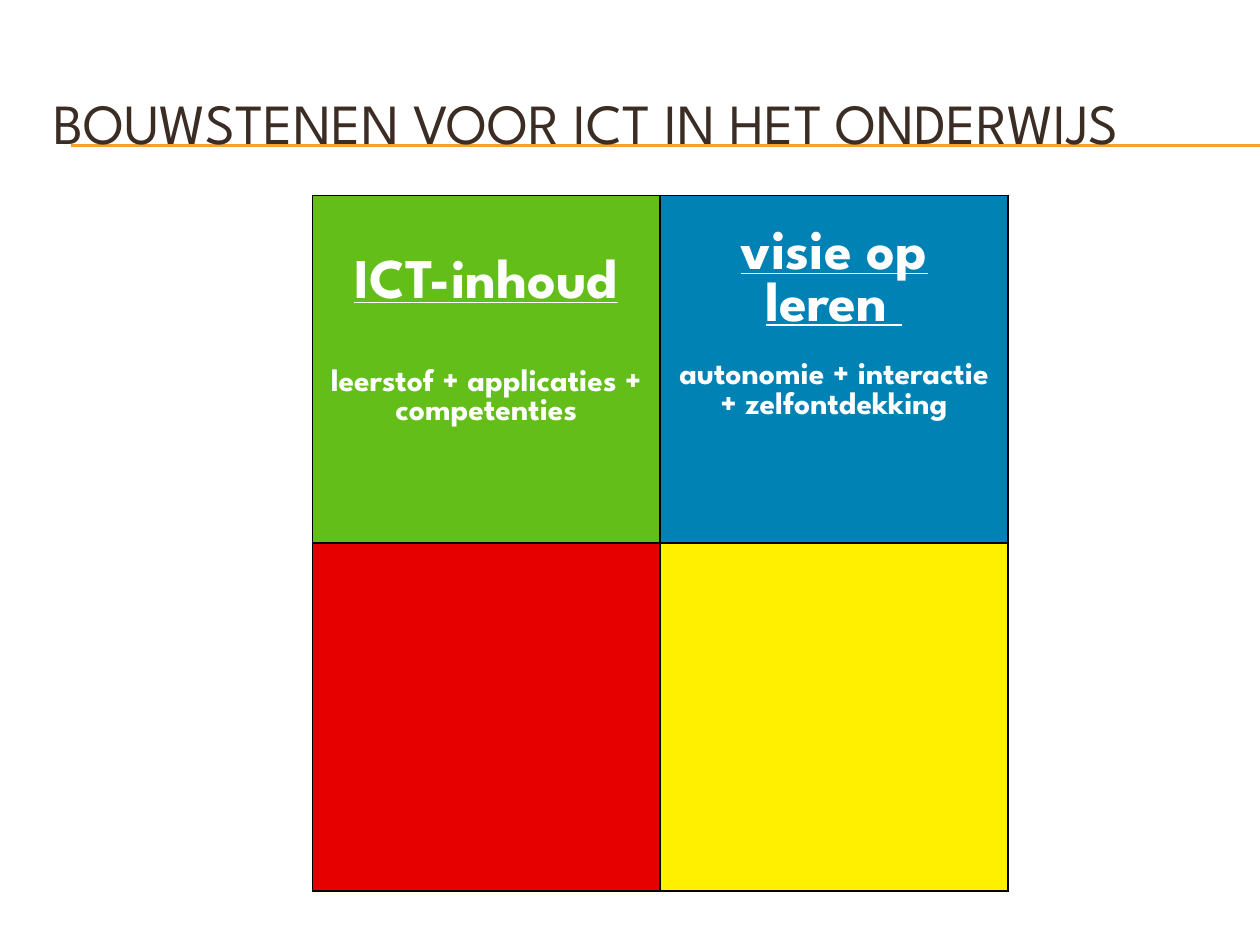
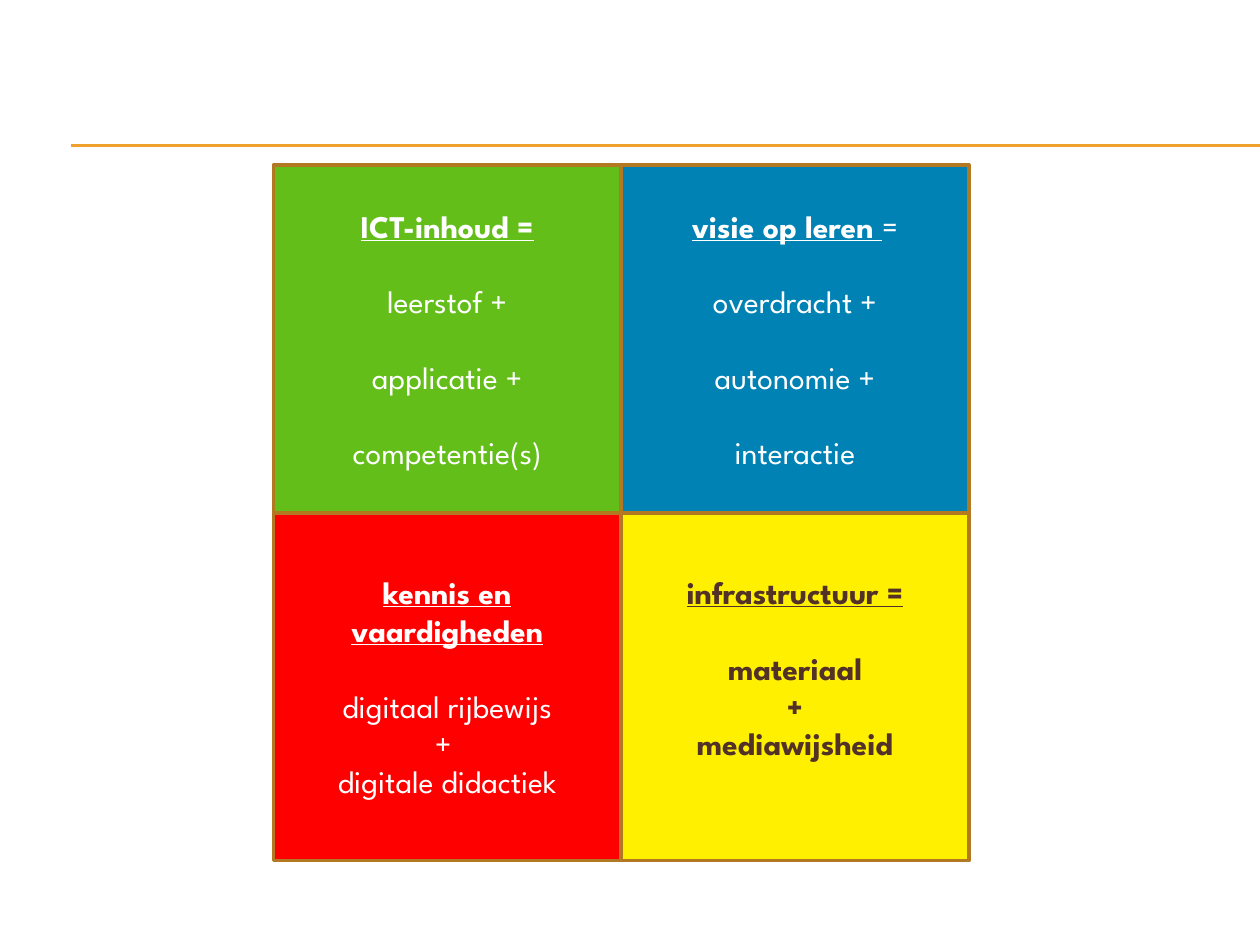
import lxml.etree
import pptx
import pptx.dml.color
import pptx.enum.shapes
import pptx.enum.text
import pptx.oxml
import pptx.oxml.ns
import pptx.util

Inches = pptx.util.Inches
Pt = pptx.util.Pt
qn = pptx.oxml.ns.qn

GREEN, BLUE, YELLOW = "64BE19", "0082B4", "FFF000"
WHITE, BROWN = "FFFFFF", "523227"
TILE = 2.76
PITCH = 21.6
BLANK = 0.23


def rgb(value):
    return pptx.dml.color.RGBColor.from_string(value)


class Deck:
    """Holds the shared style and the slide being built."""

    font = "League Spartan"
    accent, title_color, tile_edge = "F0A22E", "3B2C24", "B27822"

    def __init__(self):
        self.prs = pptx.Presentation()
        self.prs.slide_width, self.prs.slide_height = Inches(10), Inches(7.5)

    def new_slide(self):
        self.slide = self.prs.slides.add_slide(self.prs.slide_layouts[6])
        for y in (1.15, 1.16):
            self.rule(y)

    def rule(self, y):
        rule = self.slide.shapes.add_connector(
            pptx.enum.shapes.MSO_CONNECTOR.STRAIGHT,
            Inches(0.56), Inches(y), Inches(10), Inches(y))
        rule.line.color.rgb = rgb(self.accent)
        rule.line.width = Pt(0.75)
        lxml.etree.SubElement(rule._element.spPr, qn("a:effectLst"))

    def add_text(self, paragraph, text, size, color, bold=False, underline=False):
        paragraph.add_run().text = text
        font = paragraph.font
        font.name, font.size = self.font, Pt(size)
        font.bold, font.underline = bold, underline
        font.color.rgb = rgb(color)

    def title(self, text):
        box = self.slide.shapes.add_textbox(
            Inches(0.33), Inches(0.5), Inches(9.5), Inches(0.92))
        frame = box.text_frame
        frame.word_wrap = True
        frame.vertical_anchor = pptx.enum.text.MSO_ANCHOR.MIDDLE
        frame.paragraphs[0].line_spacing = Pt(40)
        self.add_text(frame.paragraphs[0], text, 32.4, self.title_color)

    def tile(self, x, y, fill, heading, lines, gap, color=WHITE,
             bold=False, tail="", blank_below=0):
        tile = self.slide.shapes.add_shape(
            pptx.enum.shapes.MSO_SHAPE.RECTANGLE,
            Inches(x), Inches(y), Inches(TILE), Inches(TILE))
        tile.shadow.inherit = False
        tile.fill.solid()
        tile.fill.fore_color.rgb = rgb(fill)
        tile.line.color.rgb = rgb(self.tile_edge)
        tile.line.width = Pt(2)
        frame = tile.text_frame
        frame.word_wrap = True
        frame.vertical_anchor = pptx.enum.text.MSO_ANCHOR.MIDDLE
        frame.margin_bottom = Inches(0.05 + blank_below)
        first = frame.paragraphs[0]
        self.add_text(first, heading, 18, color, True, True)
        if tail:
            equals = first.add_run()
            equals.text = tail
            equals.font.bold = equals.font.underline = False
        for i, line in enumerate(lines):
            paragraph = frame.add_paragraph()
            self.add_text(paragraph, line, 18, color, bold)
            if i == 0 or gap:
                paragraph.space_before = Pt(PITCH)
        for paragraph in frame.paragraphs:
            paragraph.alignment = pptx.enum.text.PP_ALIGN.CENTER
            paragraph.line_spacing = Pt(PITCH)

    def grid(self, x, y, rows):
        side = Inches(2 * TILE)
        table = self.slide.shapes.add_table(
            2, 2, Inches(x), Inches(y), side, side).table
        for i in range(2):
            table.rows[i].height = table.columns[i].width = Inches(TILE)
        for r, row in enumerate(rows):
            for c, block in enumerate(row):
                self.block(table.cell(r, c), *block)

    def block(self, cell, fill, heading="", body="", blanks=0):
        cell.fill.solid()
        cell.fill.fore_color.rgb = rgb(fill)
        self.borders(cell)
        if not heading:
            return
        cell.margin_top = Inches(0.05 + blanks * BLANK)
        frame = cell.text_frame
        self.add_text(frame.paragraphs[0], heading, 32, WHITE, True, True)
        paragraph = frame.add_paragraph()
        self.add_text(paragraph, body, 18, WHITE, True)
        paragraph.space_before = Inches(blanks * BLANK)
        for paragraph in frame.paragraphs:
            paragraph.alignment = pptx.enum.text.PP_ALIGN.CENTER

    def borders(self, cell):
        properties = cell._tc.get_or_add_tcPr()
        for i, side in enumerate("LRTB"):
            properties.insert(i, pptx.oxml.parse_xml(
                f'<a:ln{side} {pptx.oxml.ns.nsdecls("a")} w="{Pt(1)}">'
                '<a:solidFill><a:srgbClr val="000000"/></a:solidFill>'
                f'</a:ln{side}>'))


def main():
    deck = Deck()

    deck.new_slide()
    deck.title("BOUWSTENEN VOOR ICT IN HET ONDERWIJS")
    deck.grid(2.48, 1.55, [
        [(GREEN, "ICT-inhoud", "leerstof + applicaties + competenties", 2),
         (BLUE, "visie op leren ", "autonomie + interactie + zelfontdekking", 1)],
        [("E60000",), (YELLOW,)],
    ])

    deck.new_slide()
    left, top = 2.17, 1.31
    right, bottom = left + TILE, top + TILE
    deck.tile(right, top, BLUE, "visie op leren ",
              ["overdracht +", "autonomie +", "interactie"], True, tail="=")
    deck.tile(right, bottom, YELLOW, "infrastructuur =",
              ["materiaal", "+", "mediawijsheid"], False,
              color=BROWN, bold=True, blank_below=0.3)
    deck.tile(left, bottom, "FF0000", "kennis en vaardigheden",
              ["digitaal rijbewijs", "+ ", "digitale didactiek"], False)
    deck.tile(left, top, GREEN, "ICT-inhoud =",
              ["leerstof +", "applicatie +", "competentie(s)"], True)

    deck.prs.save("out.pptx")


if __name__ == "__main__":
    main()
